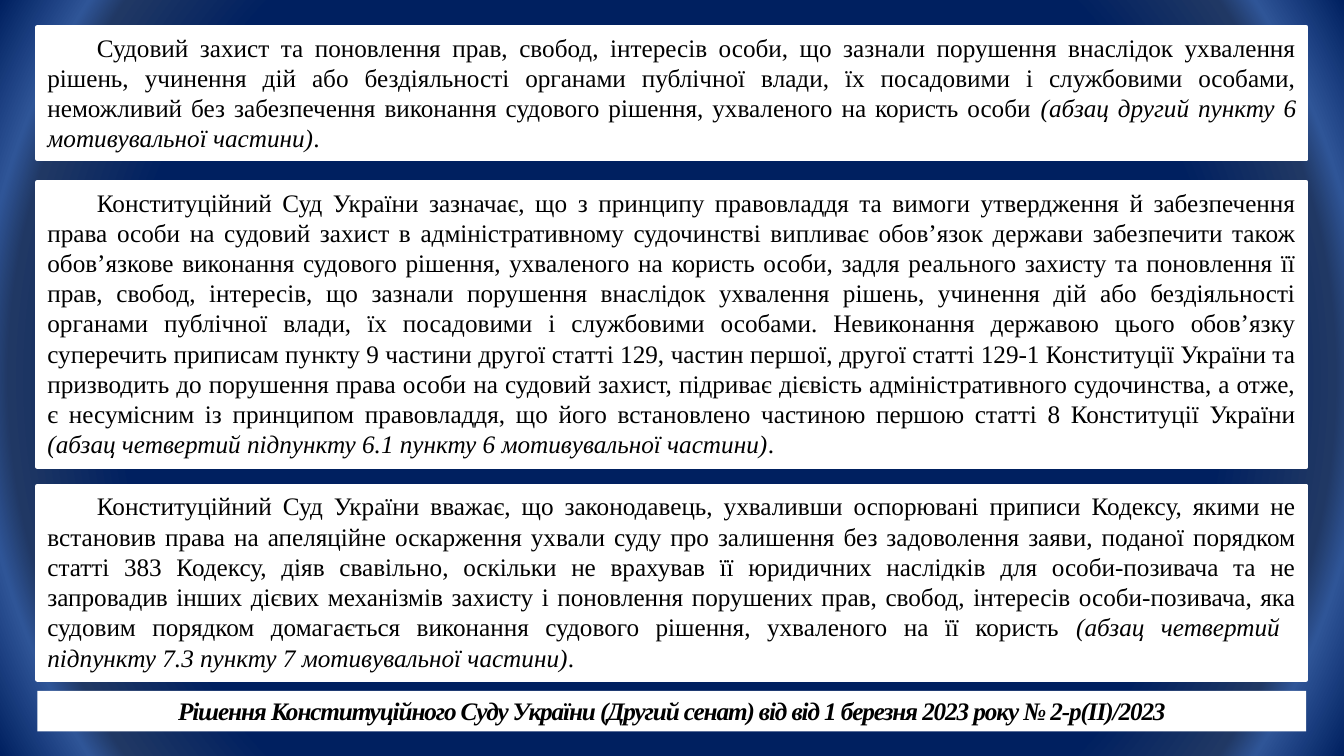
import pptx
import pptx.util
import pptx.oxml
import pptx.oxml.ns
import pptx.dml.color
import pptx.enum.shapes
import pptx.enum.text

Pt = pptx.util.Pt
ALIGN = pptx.enum.text.PP_ALIGN
COLORS = {"navy": "002060", "slate": "203864", "blue": "2F5597",
          "white": "FFFFFF", "black": "000000"}
STOPS = [(71, "navy"), (86, "slate"), (90, "blue"), (100, "navy")]
FONT = "Times New Roman"
LEFT, WIDTH = 26.8, 906.3
INDENT = 35.4

QUOTES = [
    (19.4, 94.4,
     ["Судовий захист та поновлення прав, свобод, інтересів особи, що зазнали порушення "
      "внаслідок ухвалення рішень, учинення дій або бездіяльності органами публічної влади, "
      "їх посадовими і службовими особами, неможливий без забезпечення виконання судового "
      "рішення, ухваленого на користь особи "],
     ["(абзац другий пункту 6 мотивувальної частини)"]),
    (129.9, 203.6,
     ["Конституційний Суд України зазначає, що з принципу правовладдя та вимоги утвердження "
      "й забезпечення права особи на судовий захист в адміністративному судочинстві випливає "
      "обов’язок держави забезпечити також обов’язкове виконання судового рішення, ухваленого "
      "на користь особи, задля реального захисту та поновлення її прав, свобод, інтересів, що "
      "зазнали порушення внаслідок ухвалення рішень, учинення дій або бездіяльності органами "
      "публічної влади, їх посадовими і службовими особами.",
      "Невиконання державою цього обов’язку суперечить приписам пункту 9 частини другої "
      "статті 129, частин першої, другої статті 129-1 Конституції України та призводить до "
      "порушення права особи на судовий захист, підриває дієвість адміністративного "
      "судочинства, а отже, є несумісним із принципом правовладдя, що його встановлено "
      "частиною першою статті 8 Конституції України "],
     ["(абзац четвертий підпункту 6.1 пункту 6 мотивувальної частини)"]),
    (347, 138.4,
     ["Конституційний Суд України вважає, що законодавець, ухваливши оспорювані приписи "
      "Кодексу, якими не встановив права на апеляційне оскарження ухвали суду про залишення "
      "без задоволення заяви, поданої порядком статті 383 Кодексу, діяв свавільно, оскільки не "
      "врахував її юридичних наслідків для особи-позивача та не запровадив інших дієвих "
      "механізмів захисту і поновлення порушених прав, свобод, інтересів особи-позивача, яка "
      "судовим порядком домагається виконання судового рішення, ухваленого на її користь "],
     ["(абзац четвертий ", "підпункту 7.3 пункту 7 мотивувальної частини)"]),
]
DECISION = ("Рішення Конституційного Суду України (Другий сенат) від від 1 березня 2023 року "
            "№ 2-р(ІІ)/2023")


def rgb(name):
    return pptx.dml.color.RGBColor.from_string(COLORS[name])


def set_background(s):
    stops = "".join(
        f'<a:gs pos="{pos * 1000}"><a:srgbClr val="{COLORS[name]}"/></a:gs>'
        for pos, name in STOPS)
    grad = pptx.oxml.parse_xml(
        f'<a:gradFill {pptx.oxml.ns.nsdecls("a")} rotWithShape="1"><a:gsLst>{stops}</a:gsLst>'
        '<a:path path="circle"><a:fillToRect l="50000" t="50000" r="50000" b="50000"/>'
        '</a:path></a:gradFill>')
    s.background.fill.solid()
    bg_pr = s.element.find(".//" + pptx.oxml.ns.qn("p:bgPr"))
    bg_pr.replace(bg_pr[0], grad)


def add_panel(s, top, height, align):
    sp = s.shapes.add_shape(pptx.enum.shapes.MSO_SHAPE.RECTANGLE,
                            Pt(LEFT), Pt(top), Pt(WIDTH), Pt(height))
    sp.shadow.inherit = False
    sp.fill.solid()
    sp.fill.fore_color.rgb = rgb("white")
    sp.line.fill.background()
    tf = sp.text_frame
    tf.word_wrap = True
    tf.auto_size = pptx.enum.text.MSO_AUTO_SIZE.SHAPE_TO_FIT_TEXT
    tf.vertical_anchor = pptx.enum.text.MSO_ANCHOR.TOP
    p = tf.paragraphs[0]
    p.alignment = align
    p.font.name = FONT
    p.font.size = Pt(18)
    p.font.color.rgb = rgb("black")
    return sp, p


def add_run(p, text, italic=False):
    r = p.add_run()
    r.text = text
    if italic:
        r.font.italic = True
    return r


def add_quote(s, top, height, sentences, reference):
    sp, p = add_panel(s, top, height, ALIGN.JUSTIFY)
    sp.line.color.rgb = rgb("white")
    sp.line.width = Pt(3)
    p_pr = p._p.get_or_add_pPr()
    p_pr.set("marL", "0")
    p_pr.set("indent", str(int(Pt(INDENT))))
    add_run(p, " ".join(sentences))
    for i, line in enumerate(reference):
        if i:
            p.add_line_break()
        add_run(p, line, italic=True)
    add_run(p, ".")


def add_decision(s, top, height, text):
    sp, p = add_panel(s, top, height, ALIGN.CENTER)
    p.font.bold = True
    r = add_run(p, text, italic=True)
    r._r.get_or_add_rPr().set("spc", "-80")


def main():
    prs = pptx.Presentation()
    prs.slide_width, prs.slide_height = Pt(960), Pt(540)
    s = prs.slides.add_slide(prs.slide_layouts[6])
    set_background(s)
    for quote in QUOTES:
        add_quote(s, *quote)
    add_decision(s, 493.4, 29, DECISION)
    prs.save("out.pptx")


if __name__ == "__main__":
    main()
